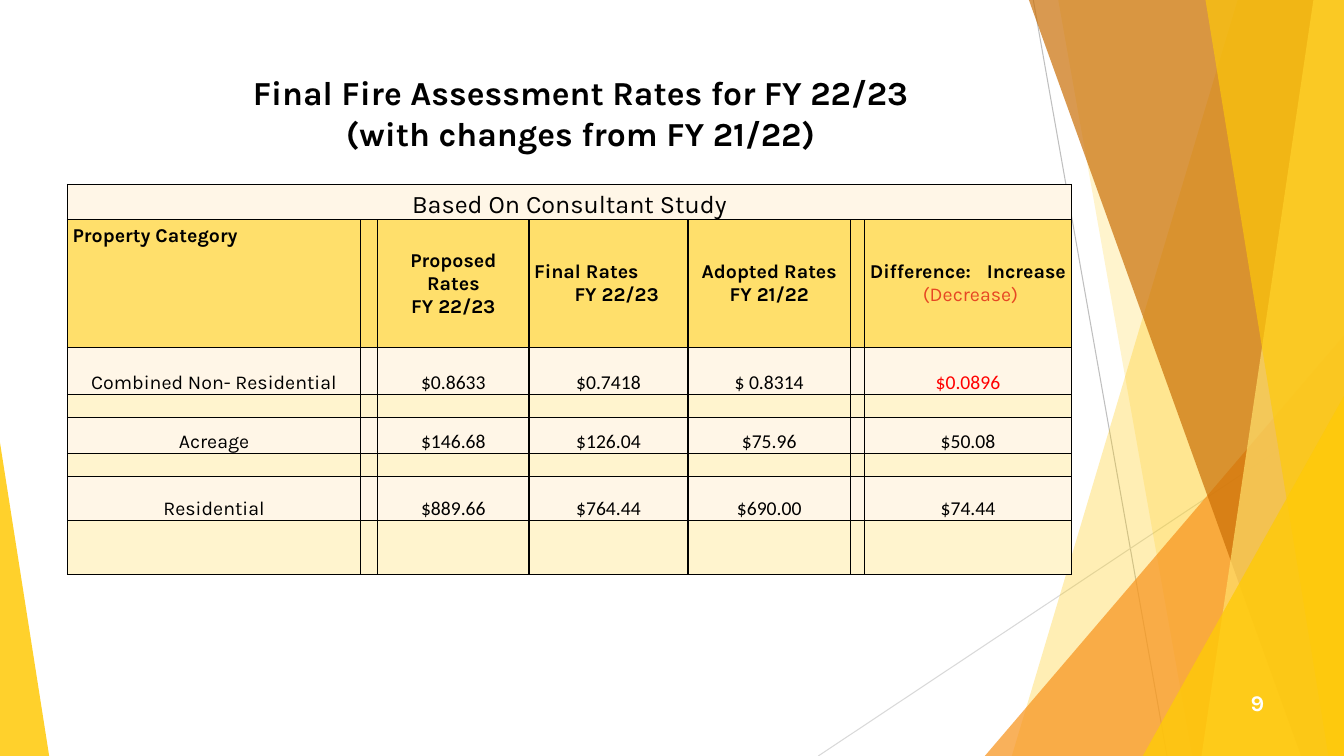
from lxml import etree
from pptx import Presentation
from pptx import util as u
from pptx.dml.color import RGBColor
from pptx.enum import shapes, text
from pptx.oxml.ns import qn

WIDTH, HEIGHT = 33.87, 19.05
LEFT, CENTER, RIGHT = text.PP_ALIGN.LEFT, text.PP_ALIGN.CENTER, text.PP_ALIGN.RIGHT


def color(value):
    return RGBColor.from_string(value)


def write(frame, content, size=14, font="Karla", fill="000000", bold=False, align=CENTER):
    frame.word_wrap = True
    for index, line in enumerate(content.split("\n")):
        paragraph = frame.paragraphs[0] if index == 0 else frame.add_paragraph()
        paragraph.alignment = align
        run = paragraph.add_run()
        run.text = line
        run.font.size = u.Pt(size)
        run.font.name = font
        run.font.bold = bold
        run.font.color.rgb = color(fill)


presentation = Presentation()
presentation.slide_width = u.Cm(WIDTH)
presentation.slide_height = u.Cm(HEIGHT)
slide = presentation.slides.add_slide(presentation.slide_layouts[6])

for x1, y1, x2, y2, stroke in [
    (26.04, 0, 29.41, HEIGHT, "BFBFBF"),
    (WIDTH, 10.24, 20.62, HEIGHT, "D9D9D9"),
]:
    connector = slide.shapes.add_connector(
        shapes.MSO_CONNECTOR.STRAIGHT, u.Cm(x1), u.Cm(y1), u.Cm(x2), u.Cm(y2))
    connector.line.color.rgb = color(stroke)
    connector.line.width = u.Pt(0.75)
    etree.SubElement(connector._element.spPr, qn("a:effectLst"))

# Bands: top x, bottom x. Triangles: left, top, width, apex.
decorations = [
    ((31.19, 25.5), "FFCA08", 30),
    ((26.67, 30.05), "FFCA08", 20),
    ((24.82, 8.46, 9.05, 1), "F8931D", 72),
    ((25.93, 32.79), "CA6F06", 70),
    ((33.1, 30.28), "FFDF6B", 70),
    ((30.38, 33.48), "FFCA08", 65),
    ((28.8, 9.98, 5.07, 1), "FFCA08", 80),
    ((0, 11.15, 1.24, 0), "FFCA08", 85),
]
for geometry, fill, opacity in decorations:
    if len(geometry) == 2:
        top_x, bottom_x = geometry
        builder = slide.shapes.build_freeform(u.Cm(top_x), 0)
        corners = [(WIDTH, 0), (WIDTH, HEIGHT), (bottom_x, HEIGHT)]
        builder.add_line_segments([(u.Cm(x), u.Cm(y)) for x, y in corners], close=True)
        shape = builder.convert_to_shape()
    else:
        left, top, width, apex = geometry
        shape = slide.shapes.add_shape(
            shapes.MSO_SHAPE.ISOSCELES_TRIANGLE,
            u.Cm(left), u.Cm(top), u.Cm(width), u.Cm(HEIGHT - top))
        shape.adjustments[0] = apex
    shape.shadow.inherit = False
    shape.line.fill.background()
    shape.fill.solid()
    shape.fill.fore_color.rgb = color(fill)
    tint = shape._element.spPr.find(qn("a:solidFill"))[0]
    etree.SubElement(tint, qn("a:alpha"), val=str(opacity * 1000))

title = slide.shapes.add_textbox(u.Cm(6.02), u.Cm(1.7), u.Cm(17.22), u.Cm(2.31))
write(title.text_frame, "Final Fire Assessment Rates for FY 22/23 (with changes from FY 21/22)",
      size=24, bold=True)

column_widths = [7.39, 0.43, 3.81, 4.01, 4.09, 0.36, 5.21]
row_heights = [0.89, 3.22, 1.19, 0.58, 0.89, 0.58, 1.11, 1.37]
headers = ["Property Category", "", "Proposed Rates\nFY 22/23", "Final Rates\nFY 22/23",
           "Adopted Rates\nFY 21/22", "", "Difference:\tIncrease"]
rows = [
    ["Based On Consultant Study"] + [""] * 6,
    headers,
    ["Combined Non- Residential", "", "$0.8633", "$0.7418", "$ 0.8314", "", "$0.0896"],
    [""] * 7,
    ["Acreage", "", "$146.68", "$126.04", "$75.96", "", "$50.08"],
    [""] * 7,
    ["Residential", "", "$889.66", "$764.44", "$690.00", "", "$74.44"],
    [""] * 7,
]
table = slide.shapes.add_table(
    len(rows), len(column_widths), u.Cm(1.7), u.Cm(4.65),
    u.Cm(sum(column_widths)), u.Cm(sum(row_heights))).table
table.first_row = False
table.horz_banding = False
for column, width in zip(table.columns, column_widths):
    column.width = u.Cm(width)
for row, height in zip(table.rows, row_heights):
    row.height = u.Cm(height)
table.cell(0, 0).merge(table.cell(0, 6))

for r, values in enumerate(rows):
    is_header = r == 1
    for c, value in enumerate(values):
        cell = table.cell(r, c)
        margin = u.Cm(0.13 if is_header else 0)
        cell.margin_left = cell.margin_right = cell.margin_top = cell.margin_bottom = margin
        cell.vertical_anchor = text.MSO_ANCHOR.MIDDLE if is_header else text.MSO_ANCHOR.BOTTOM
        properties = cell._tc.get_or_add_tcPr()
        for side in ("lnL", "lnR", "lnT", "lnB"):
            border = etree.SubElement(properties, qn("a:" + side), w=str(u.Pt(1)))
            stroke = etree.SubElement(border, qn("a:solidFill"))
            etree.SubElement(stroke, qn("a:srgbClr"), val="000000")
        cell.fill.solid()
        cell.fill.fore_color.rgb = color(
            "FFDF6B" if is_header else "FFF4CE" if r in (3, 5, 7) else "FFF6E7")
        if value:
            write(cell.text_frame, value,
                  size=18 if r == 0 else 14,
                  font="Calibri" if r > 1 and c > 0 else "Karla",
                  fill="FF0000" if (r, c) == (2, 6) else "000000",
                  bold=is_header,
                  align=LEFT if is_header and c in (0, 3, 6) else CENTER)
        else:
            etree.SubElement(cell.text_frame.paragraphs[0]._p, qn("a:endParaRPr"), sz="600")

table.cell(1, 0).vertical_anchor = text.MSO_ANCHOR.TOP
final_year = table.cell(1, 3).text_frame.paragraphs[1]
final_year._p.get_or_add_pPr().set("marL", str(u.Cm(1.02)))

difference = table.cell(1, 6)
difference.margin_right = 0
heading = difference.text_frame.paragraphs[0]
tabs = etree.SubElement(heading._p.get_or_add_pPr(), qn("a:tabLst"))
etree.SubElement(tabs, qn("a:tab"), pos=str(u.Cm(2.95)), algn="l")
decrease = difference.text_frame.add_paragraph()
decrease.alignment = CENTER
run = decrease.add_run()
run.text = "(Decrease)"
run.font.size = u.Pt(14)
run.font.name = "Karla"
run.font.color.rgb = color("E64823")

page_number = slide.shapes.add_textbox(u.Cm(30.2), u.Cm(17.2), u.Cm(1.91), u.Cm(1.02))
page_number.text_frame.vertical_anchor = text.MSO_ANCHOR.MIDDLE
write(page_number.text_frame, "9", size=16, fill="FFFFFF", bold=True, align=RIGHT)

presentation.save("out.pptx")
